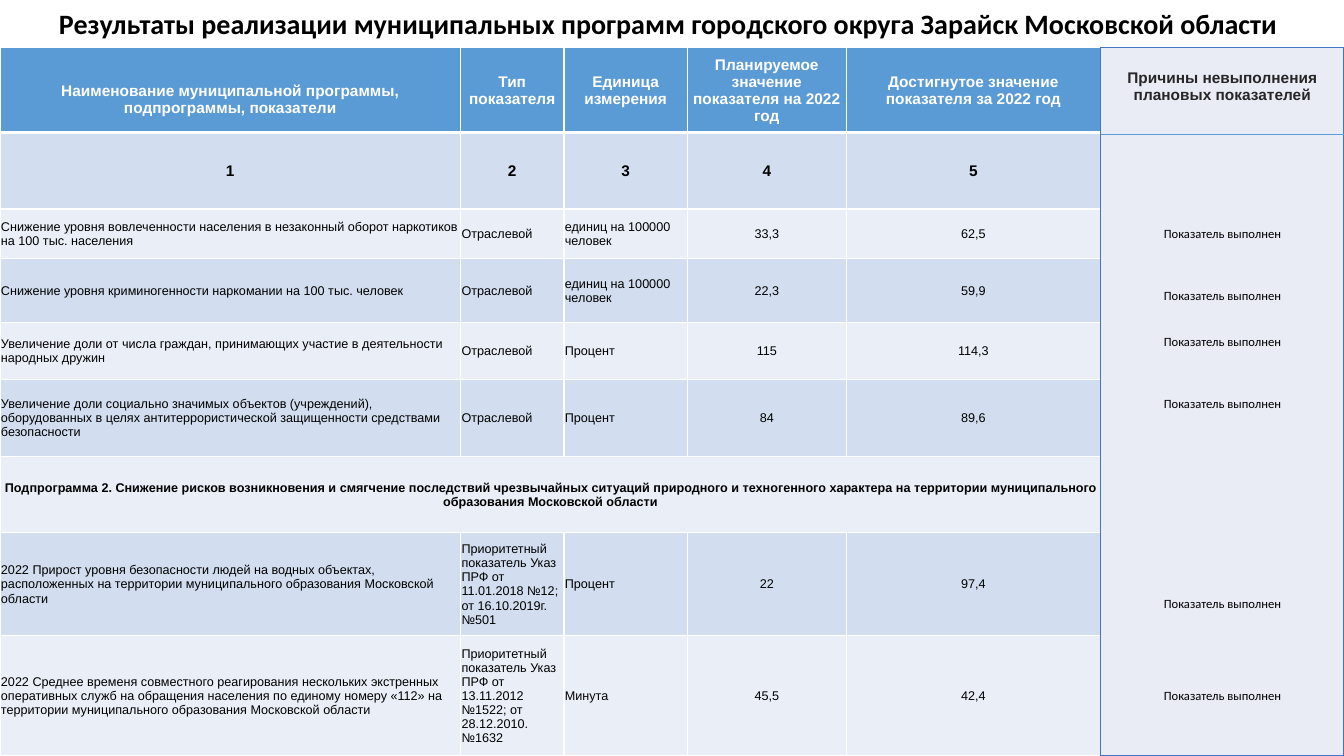
from lxml import etree
from pptx import Presentation, util as u
from pptx.dml.color import RGBColor
from pptx.enum import shapes, text
from pptx.oxml.ns import qn

CENTER, LEFT = text.PP_ALIGN.CENTER, text.PP_ALIGN.LEFT
HEADER, DARK_BAND, LIGHT_BAND = "5B9BD5", "D2DEEF", "EAEFF7"
WHITE, BLACK = "FFFFFF", "000000"


def color(value):
    return RGBColor.from_string(value)


class Page:
    """Holds the current slide; lengths are percent of the slide's size."""

    def __init__(self, deck):
        self.deck = deck
        self.slide = deck.slides.add_slide(deck.slide_layouts[6])

    def x(self, share):
        return round(self.deck.slide_width * share / 100)

    def y(self, share):
        return round(self.deck.slide_height * share / 100)

    def area(self, left, top, width, height):
        return self.x(left), self.y(top), self.x(width), self.y(height)

    def style(self, para, size, font="Arial", ink=BLACK, bold=False, align=CENTER):
        para.alignment = align
        para.font.size, para.font.name, para.font.bold = u.Pt(size), font, bold
        para.font.color.rgb = color(ink)

    def title(self, words, *area):
        box = self.slide.shapes.add_textbox(*self.area(*area))
        box.text_frame.word_wrap = True
        para = box.text_frame.paragraphs[0]
        para.text = words
        self.style(para, 20, "Calibri", bold=True)

    def table(self, left, top, widths, heights):
        frame = self.slide.shapes.add_table(
            len(heights), len(widths),
            *self.area(left, top, sum(widths), sum(heights)))
        table = frame.table
        table.first_row = table.horz_banding = False
        for column, width in zip(table.columns, widths):
            column.width = self.x(width)
        for row, height in zip(table.rows, heights):
            row.height = self.y(height)
        return table

    def paint(self, cell, fill, border, bottom=1, top=1):
        props = cell._tc.get_or_add_tcPr()
        for side, points in (("L", 1), ("R", 1), ("T", top), ("B", bottom)):
            edge = etree.SubElement(props, qn(f"a:ln{side}"), w=str(u.Pt(points)))
            solid = etree.SubElement(edge, qn("a:solidFill"))
            etree.SubElement(solid, qn("a:srgbClr"), val=border)
        cell.fill.solid()
        cell.fill.fore_color.rgb = color(fill)

    def margins(self, cell, left, top, right, bottom):
        cell.margin_left, cell.margin_top = u.Inches(left), u.Inches(top)
        cell.margin_right, cell.margin_bottom = u.Inches(right), u.Inches(bottom)

    def rule(self, left, right, top, ink, points):
        line = self.slide.shapes.add_connector(
            shapes.MSO_CONNECTOR.STRAIGHT,
            self.x(left), self.y(top), self.x(right), self.y(top))
        line.line.color.rgb = color(ink)
        line.line.width = u.Pt(points)
        etree.SubElement(line._element.spPr, qn("a:effectLst"))


TITLE = "Результаты реализации муниципальных программ городского округа Зарайск Московской области"
SECTOR = "Отраслевой"
PER_PEOPLE = "единиц на 100000 человек"
ROWS = [
    ["Наименование муниципальной программы, подпрограммы, показатели",
     "Тип показателя", "Единица измерения",
     "Планируемое значение показателя на 2022 год",
     "Достигнутое значение показателя за 2022 год"],
    ["1", "2", "3", "4", "5"],
    ["Снижение уровня вовлеченности населения в незаконный оборот наркотиков на 100 тыс. населения",
     SECTOR, PER_PEOPLE, "33,3", "62,5"],
    ["Снижение уровня криминогенности наркомании на 100 тыс. человек",
     SECTOR, PER_PEOPLE, "22,3", "59,9"],
    ["Увеличение доли от числа граждан, принимающих участие в деятельности народных дружин",
     SECTOR, "Процент", "115", "114,3"],
    ["Увеличение доли социально значимых объектов (учреждений), оборудованных в целях "
     "антитеррористической защищенности средствами безопасности",
     SECTOR, "Процент", "84", "89,6"],
    ["Подпрограмма 2. Снижение рисков возникновения и смягчение последствий чрезвычайных "
     "ситуаций природного и техногенного характера на территории муниципального "
     "образования Московской области"],
    ["2022 Прирост уровня безопасности людей на водных объектах, расположенных на "
     "территории муниципального образования Московской области",
     "Приоритетный показатель Указ ПРФ от 11.01.2018 №12; от 16.10.2019г. №501",
     "Процент", "22", "97,4"],
    ["2022 Среднее временя совместного реагирования нескольких экстренных оперативных "
     "служб на обращения населения по единому номеру «112» на территории "
     "муниципального образования Московской области",
     "Приоритетный показатель Указ ПРФ от 13.11.2012 №1522; от 28.12.2010. №1632",
     "Минута", "45,5", "42,4"],
]
WIDTHS = [34.27, 7.69, 9.2, 11.8, 18.94]
HEIGHTS = [11.25, 10.13, 6.57, 8.4, 7.6, 10.13, 10.13, 13.6, 15.9]
TOP = 6.27
SPLIT = sum(WIDTHS)
STATUS_GAPS = [88, 33, 22, 33, 132, 55]  # points above each status line


def add_results(page):
    table = page.table(0, TOP, WIDTHS, HEIGHTS)
    for r, row in enumerate(ROWS):
        band = HEADER if r == 0 else DARK_BAND if r % 2 else LIGHT_BAND
        for c in range(len(WIDTHS)):
            cell = table.cell(r, c)
            page.paint(cell, band, WHITE, bottom=3 if r == 0 else 1, top=3 if r == 1 else 1)
            page.margins(cell, 0.01, 0.19 if r == c == 0 else 0.01, 0.01, 0)
            cell.vertical_anchor = text.MSO_ANCHOR.MIDDLE
            para = cell.text_frame.paragraphs[0]
            para.text = row[c] if c < len(row) else ""
            heading = r < 2
            page.style(para, 11 if heading else 9, ink=WHITE if r == 0 else BLACK,
                       bold=heading or len(row) == 1,
                       align=CENTER if heading or len(row) == 1 or c > 2 else LEFT)
        if len(row) == 1:
            table.cell(r, 0).merge(table.cell(r, len(WIDTHS) - 1))


def add_reasons(page):
    table = page.table(SPLIT, TOP, [100 - SPLIT], [sum(HEIGHTS)])
    cell = table.cell(0, 0)
    page.paint(cell, "E9EBF5", "4472C4")
    page.margins(cell, 0.1, 0.22, 0.1, 0.05)
    frame = cell.text_frame
    frame.paragraphs[0].text = "Причины невыполнения плановых показателей"
    page.style(frame.paragraphs[0], 11, ink="262626", bold=True)
    for gap in STATUS_GAPS:
        para = frame.add_paragraph()
        para.text = "Показатель выполнен"
        para.space_before = u.Pt(gap)
        page.style(para, 9, "Calibri")


def main():
    deck = Presentation()
    deck.slide_width, deck.slide_height = u.Inches(13.33), u.Inches(7.5)
    page = Page(deck)
    # Heading
    page.title(TITLE, -0.6, 0.27, 100.65, 5.87)
    # Indicators and the reasons column beside them
    add_results(page)
    add_reasons(page)
    # Line under the reasons heading
    page.rule(SPLIT, 100, 17.73, HEADER, 0.5)
    deck.save("out.pptx")


if __name__ == "__main__":
    main()
